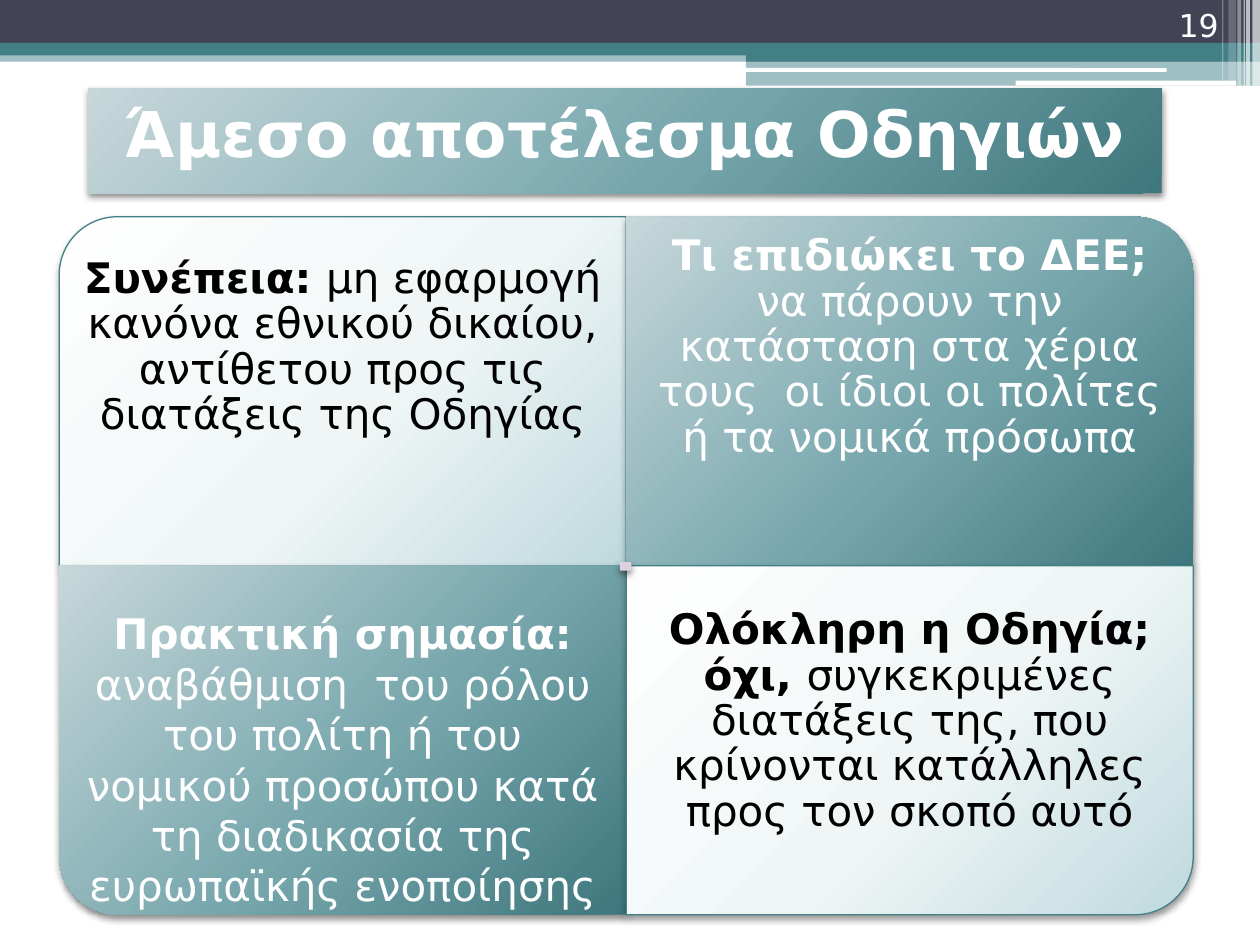
from typing import NamedTuple

from pptx import Presentation
from pptx.dml.color import RGBColor
from pptx.enum.shapes import MSO_SHAPE as Preset
from pptx.enum.text import MSO_ANCHOR as Anchor, MSO_AUTO_SIZE as AutoSize, PP_ALIGN as Align
from pptx.oxml import parse_xml
from pptx.oxml.ns import nsdecls, qn
from pptx.util import Inches, Pt

FONT = "DejaVu Sans"
WHITE, BLACK, TEAL, NAVY = "FFFFFF", "000000", "438086", "424456"
PALE = ((0, "FEFEFE"), (55, "F0F6F6"), (100, "BFD9DD"))
DEEP = ((0, "C7D7DA"), (55, "77A7AD"), (100, "3E777D"))
GRID_LEFT, GRID_TOP, CELL_WIDTH, CELL_HEIGHT = 0.47, 1.72, 4.5, 2.77
TEXT_HEIGHT, TEXT_INSET = 2.08, 0.19


class Bar(NamedTuple):
    left: float
    top: float
    width: float
    height: float
    color: str
    opacity: int = 100
    preset: Preset = Preset.RECTANGLE


class Quadrant(NamedTuple):
    column: int
    row: int
    rotation: int
    pale: bool
    lead: str
    body: str
    line_spacing: float = 0.9
    bottom_inset: float = TEXT_INSET


BARS = [
    Bar(0, 0.4, 10, 0.09, TEAL, 50),
    Bar(0, 0, 10, 0.34, NAVY),
    Bar(0, 0.34, 10, 0.1, TEAL),
    Bar(5.92, 0.39, 4.08, 0.1, TEAL),
    Bar(5.92, 0.48, 4.08, 0.2, TEAL, 50),
    Bar(5.91, 0.54, 3.35, 0.03, WHITE, preset=Preset.ROUNDED_RECTANGLE),
    Bar(8.06, 0.64, 1.75, 0.04, WHITE, preset=Preset.ROUNDED_RECTANGLE),
    Bar(9.94, 0, 0.06, 0.68, WHITE, 65),
    Bar(9.89, 0, 0.03, 0.68, WHITE, 65),
    Bar(9.87, 0, 0.01, 0.68, WHITE, 60),
    Bar(9.82, 0, 0.03, 0.68, WHITE, 40),
    Bar(9.75, 0, 0.06, 0.64, WHITE, 20),
    Bar(9.7, 0, 0.01, 0.64, WHITE, 30),
]

QUADRANTS = [
    Quadrant(0, 0, 270, True, "Συνέπεια: ",
             "μη εφαρμογή κανόνα εθνικού δικαίου, αντίθετου προς τις διατάξεις της Οδηγίας"),
    Quadrant(1, 0, 0, False, "Τι επιδιώκει το ΔΕΕ; ",
             "να πάρουν την κατάσταση στα χέρια τους  οι ίδιοι οι πολίτες ή τα νομικά πρόσωπα"),
    Quadrant(0, 1, 180, False, "Πρακτική σημασία: ",
             "αναβάθμιση  του ρόλου του πολίτη ή του νομικού προσώπου κατά τη διαδικασία "
             "της ευρωπαϊκής ενοποίησης",
             line_spacing=1.0, bottom_inset=0.58),
    Quadrant(1, 1, 90, True, "Ολόκληρη η Οδηγία; όχι, ",
             "συγκεκριμένες διατάξεις της, που κρίνονται κατάλληλες προς τον σκοπό αυτό",
             bottom_inset=1.17),
]


def rgb(color: str) -> RGBColor:
    return RGBColor.from_string(color)


def add_gradient(shape, stops) -> None:
    shape.fill.background()
    marks = "".join(
        f'<a:gs pos="{position * 1000}"><a:srgbClr val="{color}"/></a:gs>'
        for position, color in stops
    )
    gradient = parse_xml(
        f'<a:gradFill {nsdecls("a")} rotWithShape="0"><a:gsLst>{marks}</a:gsLst>'
        '<a:path path="circle"><a:fillToRect l="-40000" t="-90000" r="140000" b="190000"/>'
        "</a:path></a:gradFill>"
    )
    properties = shape._element.spPr
    properties.replace(properties.find(qn("a:noFill")), gradient)


def add_shadow(shape, opacity: int = 45, blur: float = 4) -> None:
    shape.shadow.inherit = False
    shape._element.spPr.find(qn("a:effectLst")).append(parse_xml(
        f'<a:outerShdw {nsdecls("a")} blurRad="{Pt(blur)}" dist="{Pt(2)}" dir="5400000" '
        f'rotWithShape="0"><a:srgbClr val="{BLACK}"><a:alpha val="{opacity * 1000}"/>'
        "</a:srgbClr></a:outerShdw>"
    ))


def format_paragraph(para, size: int, color: str, align: Align) -> None:
    para.alignment = align
    para.font.name = FONT
    para.font.size = Pt(size)
    para.font.color.rgb = rgb(color)


def draw_bar(page, bar: Bar):
    shape = page.shapes.add_shape(
        bar.preset, Inches(bar.left), Inches(bar.top), Inches(bar.width), Inches(bar.height))
    shape.shadow.inherit = False
    shape.line.fill.background()
    shape.fill.solid()
    shape.fill.fore_color.rgb = rgb(bar.color)
    if bar.opacity < 100:
        color = shape._element.spPr.find(qn("a:solidFill")).find(qn("a:srgbClr"))
        color.append(parse_xml(f'<a:alpha {nsdecls("a")} val="{bar.opacity * 1000}"/>'))
    return shape


def draw_page_number(page, number: str) -> None:
    box = page.shapes.add_textbox(Inches(8.94), Inches(0), Inches(0.83), Inches(0.4))
    frame = box.text_frame
    frame.word_wrap = True
    frame.vertical_anchor = Anchor.BOTTOM
    frame.text = number
    format_paragraph(frame.paragraphs[0], 18, WHITE, Align.RIGHT)


def draw_title(page, text: str) -> None:
    title = page.shapes.title
    title.left, title.top = Inches(0.7), Inches(0.7)
    title.width, title.height = Inches(8.52), Inches(0.71)
    add_gradient(title, DEEP)
    add_shadow(title)
    frame = title.text_frame
    frame.text = text
    frame.word_wrap = True
    frame.auto_size = AutoSize.SHAPE_TO_FIT_TEXT
    frame.vertical_anchor = Anchor.TOP
    para = frame.paragraphs[0]
    format_paragraph(para, 36, WHITE, Align.CENTER)
    para.font.bold = True


def draw_quadrant(page, quadrant: Quadrant) -> None:
    left = GRID_LEFT + quadrant.column * CELL_WIDTH
    top = GRID_TOP + quadrant.row * CELL_HEIGHT
    sideways = quadrant.rotation % 180 == 90
    width, height = (CELL_HEIGHT, CELL_WIDTH) if sideways else (CELL_WIDTH, CELL_HEIGHT)
    panel = page.shapes.add_shape(
        Preset.ROUND_1_RECTANGLE,
        Inches(left + (CELL_WIDTH - width) / 2), Inches(top + (CELL_HEIGHT - height) / 2),
        Inches(width), Inches(height))
    panel.rotation = quadrant.rotation
    if quadrant.pale:
        add_gradient(panel, PALE)
        panel.line.color.rgb = rgb(TEAL)
        panel.line.width = Pt(0.75)
        add_shadow(panel, 40, 4.1)
    else:
        add_gradient(panel, DEEP)
        panel.line.fill.background()
        add_shadow(panel)

    text_top = top + quadrant.row * (CELL_HEIGHT - TEXT_HEIGHT)
    box = page.shapes.add_textbox(
        Inches(left), Inches(text_top), Inches(CELL_WIDTH), Inches(TEXT_HEIGHT))
    frame = box.text_frame
    frame.word_wrap = True
    frame.vertical_anchor = Anchor.MIDDLE
    frame.margin_left = frame.margin_right = frame.margin_top = Inches(TEXT_INSET)
    frame.margin_bottom = Inches(quadrant.bottom_inset)
    para = frame.paragraphs[0]
    para.line_spacing = quadrant.line_spacing
    format_paragraph(para, 24, BLACK if quadrant.pale else WHITE, Align.CENTER)
    for text, bold in ((quadrant.lead, True), (quadrant.body, False)):
        span = para.add_run()
        span.text = text
        span.font.bold = bold


def main() -> None:
    deck = Presentation()
    deck.slide_width, deck.slide_height = Inches(10), Inches(7.5)
    page = deck.slides.add_slide(deck.slide_layouts[5])
    for bar in BARS:
        draw_bar(page, bar)
    draw_page_number(page, "19")
    for quadrant in QUADRANTS:
        draw_quadrant(page, quadrant)
    hub = draw_bar(page, Bar(4.92, 4.46, 0.09, 0.07, "DFD0E0", preset=Preset.ROUNDED_RECTANGLE))
    add_shadow(hub)
    draw_title(page, "Άμεσο αποτέλεσμα Οδηγιών")
    deck.save("out.pptx")


if __name__ == "__main__":
    main()
